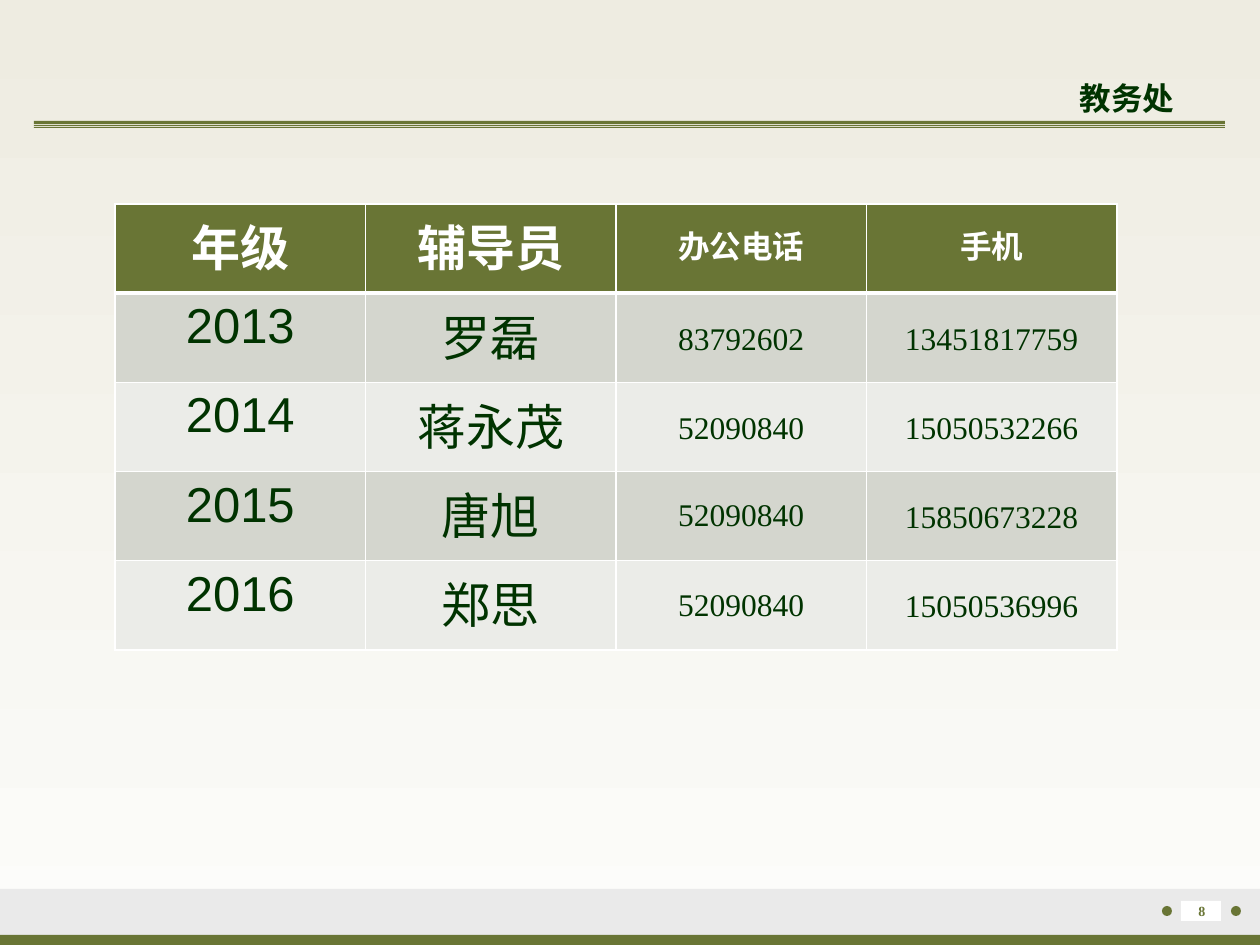
"""Build the slide with the counsellor contact table."""
from lxml import etree
from pptx import Presentation
from pptx import util as u
from pptx.dml.color import RGBColor
from pptx.enum import shapes, text
from pptx.oxml.ns import qn

PX = 914400 / 126
COLORS = {
    "olive": "697535", "green": "003300", "white": "FFFFFF", "footer": "EAEAEA",
    "odd": "D4D6CE", "even": "EBECE8", "top": "EEECE1", "bottom": "FCFCFA",
}
CJK = "Noto Sans CJK SC"


def emu(*lengths):
    return [u.Emu(round(length * PX)) for length in lengths]


def style(paragraph, size, face, color, bold):
    for run in paragraph.runs:
        run.font.size = u.Pt(size)
        run.font.name = face
        run.font.bold = bold
        run.font.color.rgb = RGBColor.from_string(COLORS[color])
        etree.SubElement(run.font._element, qn("a:ea"), typeface=CJK)


deck = Presentation()
deck.slide_width, deck.slide_height = emu(1260, 945)
slide = deck.slides.add_slide(deck.slide_layouts[6])

backdrop = slide.background.fill
backdrop.gradient()
backdrop.gradient_angle = 270
for stop, name in zip(backdrop.gradient_stops, ("top", "bottom")):
    stop.color.rgb = RGBColor.from_string(COLORS[name])

RECT, OVAL = shapes.MSO_SHAPE.RECTANGLE, shapes.MSO_SHAPE.OVAL
for kind, color, *box in (
    (RECT, "footer", 0, 889, 1260, 56),
    (RECT, "olive", 0, 935, 1260, 10),
    (OVAL, "olive", 1162, 906, 10, 10),
    (OVAL, "olive", 1231, 906, 10, 10),
    (RECT, "white", 1181, 901, 40, 20),
    (RECT, "olive", 34, 121, 1191, 3),
    (RECT, "olive", 34, 125, 1191, 1),
    (RECT, "olive", 34, 127, 1191, 1),
):
    decoration = slide.shapes.add_shape(kind, *emu(*box))
    decoration.shadow.inherit = False
    decoration.fill.solid()
    decoration.fill.fore_color.rgb = RGBColor.from_string(COLORS[color])
    decoration.line.fill.background()

office = slide.shapes.add_textbox(*emu(1042, 25, 302, 145)).text_frame
office.word_wrap = True
office.vertical_anchor = text.MSO_ANCHOR.MIDDLE
office.text = "教务处"
office.paragraphs[0]._p.get_or_add_pPr().set("indent", str(u.Inches(0.2)))
style(office.paragraphs[0], 18, CJK, "green", True)

page = slide.shapes.add_textbox(*emu(1164, 896, 76, 49)).text_frame
page.word_wrap = True
page.text = "8"
page.paragraphs[0].alignment = text.PP_ALIGN.CENTER
style(page.paragraphs[0], 8, "Times New Roman", "olive", True)

contacts = (
    ("年级", "辅导员", "办公电话", "手机"),
    ("2013", "罗磊", "83792602", "13451817759"),
    ("2014", "蒋永茂", "52090840", "15050532266"),
    ("2015", "唐旭", "52090840", "15850673228"),
    ("2016", "郑思", "52090840", "15050536996"),
)
table = slide.shapes.add_table(5, 4, *emu(115, 204, 1002, 446)).table
for r, contact in enumerate(contacts):
    for c, entry in enumerate(contact):
        cell = table.cell(r, c)
        for side in "LRTB":
            heavy = (r, side) in ((0, "B"), (1, "T"))
            border = etree.SubElement(cell._tc.get_or_add_tcPr(), qn(f"a:ln{side}"),
                                      w=str(u.Pt(3 if heavy else 1)))
            paint = etree.SubElement(border, qn("a:solidFill"))
            etree.SubElement(paint, qn("a:srgbClr"), val=COLORS["white"])
        shade = "olive" if r == 0 else "odd" if r % 2 else "even"
        cell.fill.solid()
        cell.fill.fore_color.rgb = RGBColor.from_string(COLORS[shade])
        cell.text_frame.text = entry
        line = cell.text_frame.paragraphs[0]
        line.alignment = text.PP_ALIGN.CENTER
        is_phone = c >= 2
        if is_phone:
            cell.vertical_anchor = text.MSO_ANCHOR.MIDDLE
            cell.margin_left = cell.margin_right = u.Inches(0.07)
            cell.margin_top = cell.margin_bottom = 0
            if c == 3 or r < 3:
                line.line_spacing = u.Pt(22)
        style(line, 18 if is_phone else 28, "Times New Roman" if is_phone else "Arial",
              "white" if r == 0 else "green", r == 0)

deck.save("out.pptx")
